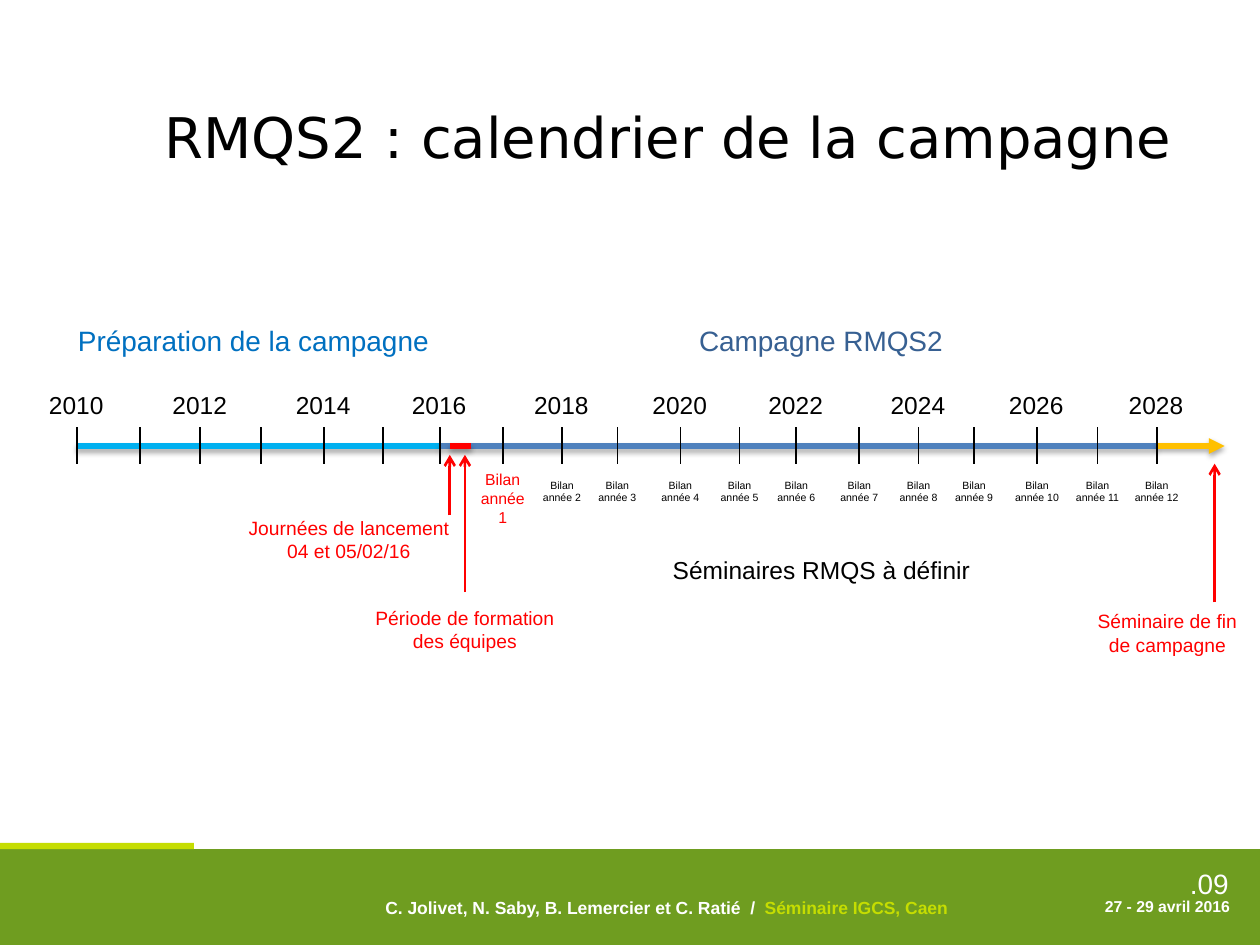
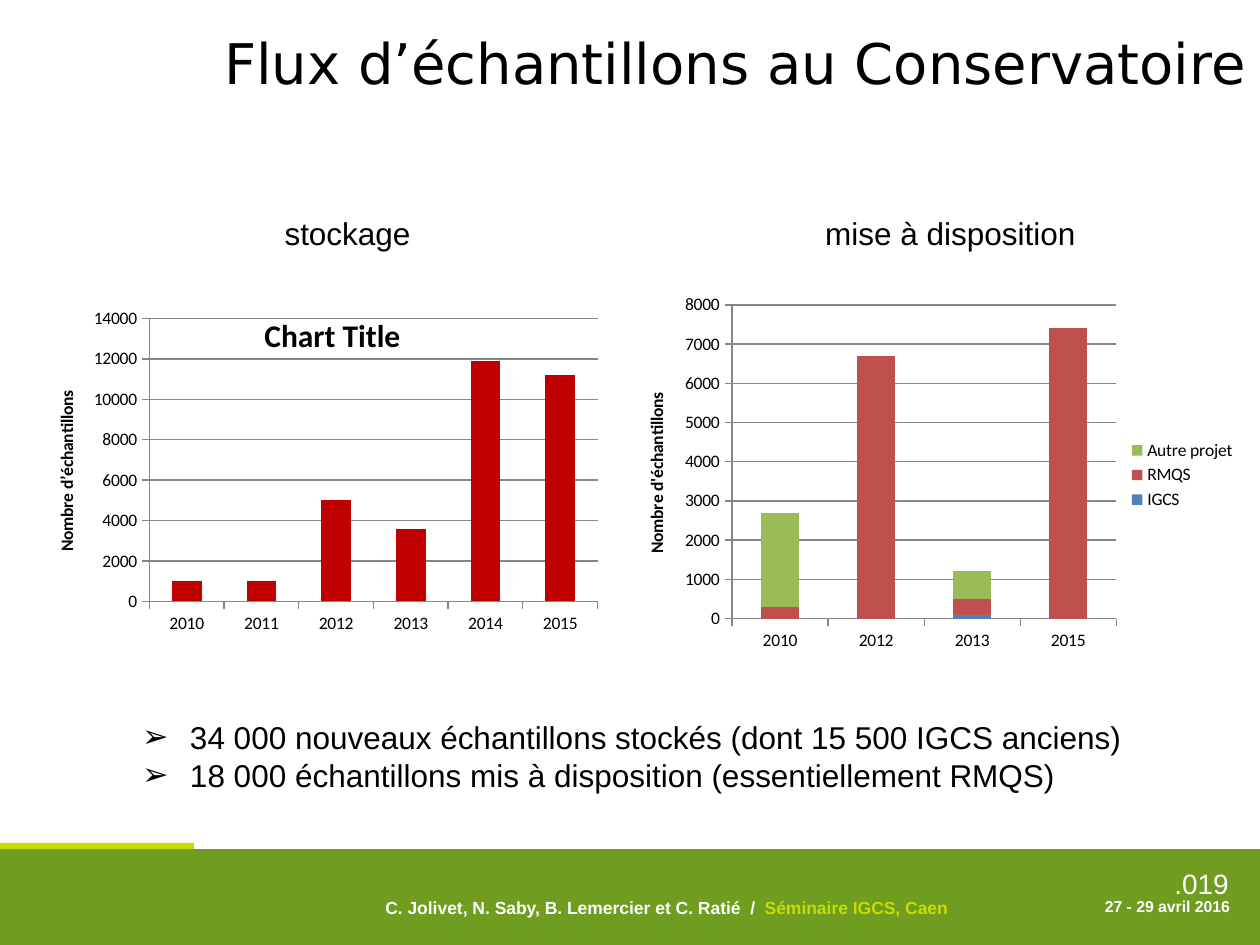
from lxml import etree
from pptx import Presentation
from pptx.chart.data import CategoryChartData
from pptx.dml.color import RGBColor
from pptx.enum.chart import XL_CHART_TYPE as ChartType, XL_LEGEND_POSITION as LegendPosition
from pptx.enum.chart import XL_TICK_MARK as TickMark
from pptx.enum.shapes import MSO_CONNECTOR as Connector, MSO_SHAPE as Shape
from pptx.enum.text import MSO_ANCHOR as Anchor, MSO_AUTO_SIZE as AutoSize, PP_ALIGN as Align
from pptx.oxml import parse_xml
from pptx.oxml.ns import nsdecls, qn
from pptx.util import Inches, Pt

BLACK = RGBColor(0x00, 0x00, 0x00)
WHITE = RGBColor(0xFF, 0xFF, 0xFF)
GREEN = RGBColor(0x6F, 0x9D, 0x20)
LIME = RGBColor(0xC5, 0xDD, 0x01)
RED = RGBColor(0xFF, 0x00, 0x00)
DARK_RED = RGBColor(0xC0, 0x00, 0x00)
BRICK = RGBColor(0xC0, 0x50, 0x4D)
OLIVE = RGBColor(0x9B, 0xBB, 0x59)
SKY = RGBColor(0x00, 0xB0, 0xF0)
BLUE = RGBColor(0x4F, 0x81, 0xBD)
MID_BLUE = RGBColor(0x00, 0x70, 0xC0)
NAVY = RGBColor(0x37, 0x60, 0x92)
AMBER = RGBColor(0xFF, 0xC0, 0x00)
GRID_GRAY = RGBColor(0x86, 0x86, 0x86)

BODY_FONT, TITLE_FONT, CHART_FONT = "Arial", "DejaVu Sans", "Calibri"

AUTHORS = "C. Jolivet, N. Saby, B. Lemercier et C. Ratié  /  "
EVENT = "Séminaire IGCS, Caen"
DATES = "27 - 29 avril 2016"
BANDS = [((0, 6.74, 10, 0.76), GREEN), ((0, 6.69, 1.54, 0.05), LIME)]

# Timeline: one tick per year from 2010 to 2028
FIRST_YEAR, FIRST_REPORT_YEAR = 2010, 2017
AXIS_Y, TICK_TOP, TICK_BOTTOM = 3.54, 3.39, 3.68
TICKS = [0.61, 1.11, 1.59, 2.07, 2.57, 3.04, 3.49, 3.99, 4.46, 4.9,
         5.4, 5.87, 6.32, 6.82, 7.29, 7.73, 8.23, 8.71, 9.18]
PERIODS = [  # start, end, colour, arrowhead
    (0.61, 3.49, SKY, None),
    (3.49, 9.18, BLUE, None),
    (9.18, 9.72, AMBER, "triangle"),
    (3.57, 3.74, RED, None),
]
EVENT_ARROWS = [(3.57, 4.09, 3.61), (3.69, 4.7, 3.61), (9.64, 4.78, 3.68)]  # x, from, to
EVENT_LABELS = [  # place, lines, wrap
    ((1.87, 4.05, 1.8, 0.47), ["Journées de lancement", "04 et 05/02/16"], False),
    ((2.74, 4.76, 1.9, 0.47), ["Période de formation des équipes"], True),
    ((8.52, 4.79, 1.49, 0.47), ["Séminaire de fin de campagne"], True),
]
TIMELINE_HEADINGS = [
    ((0.52, 2.52, 3.02, 0.37), "Préparation de la campagne", 16, MID_BLUE),
    ((5.45, 2.52, 2.16, 0.37), "Campagne RMQS2", 16, NAVY),
    ((5.24, 4.36, 2.58, 0.34), "Séminaires RMQS à définir", 14, BLACK),
]

CHARTS = [
    {
        "at": (0.32, 2.24, 4.56, 2.88), "type": ChartType.COLUMN_CLUSTERED,
        "title": "Chart Title", "axis_title": "Nombre d’échantillons",
        "years": ["2010", "2011", "2012", "2013", "2014", "2015"],
        "series": [("Series 1", [1000, 1000, 5000, 3600, 11900, 11200], DARK_RED)],
        "maximum": 14000, "step": 2000, "overlap": 0, "plot": (0.19, 0.1, 0.78, 0.78),
    },
    {
        "at": (4.91, 2.27, 5, 3), "type": ChartType.COLUMN_STACKED,
        "title": None, "axis_title": "Nombre d'échantillons",
        "years": ["2010", "2012", "2013", "2015"],
        "series": [
            ("IGCS", [None, None, 100, None], BLUE),
            ("RMQS", [300, 6700, 400, 7400], BRICK),
            ("Autre projet", [2400, None, 700, None], OLIVE),
        ],
        "maximum": 8000, "step": 1000, "overlap": 100, "plot": (0.18, 0.05, 0.61, 0.83),
    },
]
CHART_HEADINGS = [
    ((2.16, 1.65, 1.28, 0.4), "stockage"),
    ((6.45, 1.65, 2.21, 0.4), "mise à disposition"),
]
FINDINGS = [
    "34 000 nouveaux échantillons stockés (dont 15 500 IGCS anciens)",
    "18 000 échantillons mis à disposition (essentiellement RMQS)",
]


def inches(values):
    return [Inches(value) for value in values]


def style_font(font, size, color, name=BODY_FONT, bold=False):
    font.size, font.name, font.bold = Pt(size), name, bold
    font.color.rgb = color


def add_bullet(para):
    properties = para._p.get_or_add_pPr()
    properties.set("marL", str(Inches(0.38)))
    properties.set("indent", str(-Inches(0.38)))
    etree.SubElement(properties, qn("a:buFont")).set("typeface", BODY_FONT)
    etree.SubElement(properties, qn("a:buChar")).set("char", "➢")


def add_text(page, at, lines, size, color=BLACK, align=Align.LEFT,
             bold=False, wrap=True, bullets=False):
    """Add a text box; a line is a string or a list of (text, colour) spans."""
    frame = page.shapes.add_textbox(*inches(at)).text_frame
    frame.word_wrap = wrap
    frame.auto_size = AutoSize.SHAPE_TO_FIT_TEXT
    for number, line in enumerate(lines):
        para = frame.add_paragraph() if number else frame.paragraphs[0]
        para.alignment = align
        if bullets:
            add_bullet(para)
        spans = [(line, color)] if isinstance(line, str) else line
        for text, span_color in spans:
            span = para.add_run()
            span.text = text
            style_font(span.font, size, span_color, bold=bold)


def add_line(page, start, end, color, width, head=None, shadow=False):
    line = page.shapes.add_connector(Connector.STRAIGHT, *inches(start + end))
    line.line.color.rgb = color
    line.line.width = Pt(width)
    if head:
        etree.SubElement(line.get_or_add_ln(), qn("a:tailEnd")).set("type", head)
    effects = etree.SubElement(line.element.spPr, qn("a:effectLst"))
    if shadow:
        effects.append(parse_xml(
            f'<a:outerShdw {nsdecls("a")} blurRad="{Pt(3.1)}" dist="{Pt(1.8)}" dir="5400000" '
            'rotWithShape="0"><a:srgbClr val="000000"><a:alpha val="35000"/></a:srgbClr>'
            '</a:outerShdw>'))


def add_page(deck, title, title_at, number):
    """Add a slide with the shared title style, bands and footer."""
    page = deck.slides.add_slide(deck.slide_layouts[5])
    box = page.shapes.title
    box.left, box.top, box.width, box.height = inches(title_at)
    frame = box.text_frame
    frame.auto_size, frame.word_wrap = AutoSize.NONE, True
    frame.vertical_anchor = Anchor.BOTTOM
    para = frame.paragraphs[0]
    para.alignment = Align.RIGHT
    span = para.add_run()
    span.text = title
    style_font(span.font, 32, BLACK, TITLE_FONT)

    for at, color in BANDS:
        band = page.shapes.add_shape(Shape.RECTANGLE, *inches(at))
        band.shadow.inherit = False
        band.fill.solid()
        band.fill.fore_color.rgb = color
        band.line.fill.background()
    add_text(page, (8.62, 6.83, 1.23, 0.27), [f".0{number}"], 16, WHITE, Align.RIGHT)
    add_text(page, (7.78, 7.07, 2.08, 0.25), [DATES], 9, WHITE, Align.RIGHT, bold=True)
    add_text(page, (2.96, 7.07, 5.96, 0.27), [[(AUTHORS, WHITE), (EVENT, LIME)]], 10, bold=True)
    return page


def add_timeline(page):
    for start, end, color, head in PERIODS:
        add_line(page, (start, AXIS_Y), (end, AXIS_Y), color, 3, head, shadow=True)
    for year, x in enumerate(TICKS, FIRST_YEAR):
        add_line(page, (x, TICK_TOP), (x, TICK_BOTTOM), BLACK, 1)
        if year % 2 == 0:
            add_text(page, (x - 0.32, 3.05, 0.64, 0.34), [str(year)], 14, wrap=False)
        report = year - FIRST_REPORT_YEAR + 1
        if report == 1:
            width, top, height, size, color = 0.63, 3.68, 0.56, 9, RED
        else:
            width, top, height, size, color = 0.51 if report < 10 else 0.58, 3.75, 0.3, 6, BLACK
        if report >= 1:
            add_text(page, (x - width / 2, top, width, height), [f"Bilan année {report}"],
                     size, color, Align.CENTER)
    for x, start, end in EVENT_ARROWS:
        add_line(page, (x, start), (x, end), RED, 1.5, "arrow")
    for at, lines, wrap in EVENT_LABELS:
        add_text(page, at, lines, 11, RED, Align.CENTER, wrap=wrap)
    for at, heading, size, color in TIMELINE_HEADINGS:
        add_text(page, at, [heading], size, color, wrap=False)


def set_layout(parent, index, **places):
    """Give a chart part a manual layout, as fractions of the chart."""
    present = parent.find(qn("c:layout"))
    if present is not None:
        parent.remove(present)
    target = '<c:layoutTarget val="inner"/>' if "w" in places else ""
    modes = "".join(f'<c:{key}Mode val="edge"/>' for key in "xy")
    values = "".join(f'<c:{key} val="{value}"/>' for key, value in places.items())
    parent.insert(index, parse_xml(
        f'<c:layout {nsdecls("c")}><c:manualLayout>{target}{modes}{values}'
        '</c:manualLayout></c:layout>'))


def add_title_run(title, text, size):
    span = title.text_frame.paragraphs[0].add_run()
    span.text = text
    style_font(span.font, size, BLACK, CHART_FONT, bold=True)


def add_column_chart(page, content):
    data = CategoryChartData()
    data.categories = content["years"]
    for name, values, _ in content["series"]:
        data.add_series(name, values)
    chart = page.shapes.add_chart(content["type"], *inches(content["at"]), data).chart
    style_font(chart.font, 10, BLACK, CHART_FONT)

    chart.has_title = content["title"] is not None
    if chart.has_title:
        add_title_run(chart.chart_title, content["title"], 18)
        title = chart.element.xpath("c:chart/c:title")[0]
        set_layout(title, 1, x=0.38, y=0.07)
        title.find(qn("c:overlay")).set("val", "1")

    plot = chart.plots[0]
    plot.gap_width, plot.overlap = 150, content["overlap"]
    plot.vary_by_categories = False
    for series, (_, _, color) in zip(plot.series, content["series"]):
        series.format.fill.solid()
        series.format.fill.fore_color.rgb = color
    set_layout(chart.element.xpath("c:chart/c:plotArea")[0], 0, **dict(zip("xywh", content["plot"])))

    values = chart.value_axis
    values.minimum_scale, values.maximum_scale = 0, content["maximum"]
    values.major_unit = content["step"]
    values.has_major_gridlines = True
    add_title_run(values.axis_title, content["axis_title"], 10)
    for axis in (values, chart.category_axis):
        axis.major_tick_mark = TickMark.OUTSIDE
        axis.format.line.color.rgb = GRID_GRAY
    values.major_gridlines.format.line.color.rgb = GRID_GRAY

    chart.has_legend = len(content["series"]) > 1
    if chart.has_legend:
        chart.legend.position = LegendPosition.RIGHT
        chart.legend.include_in_layout = False


def main():
    deck = Presentation()
    deck.slide_width, deck.slide_height = Inches(10), Inches(7.5)

    calendar = add_page(deck, "RMQS2 : calendrier de la campagne", (0.39, 0.45, 9.02, 0.95), 9)
    add_timeline(calendar)

    flows = add_page(deck, "Flux d’échantillons au Conservatoire", (0.59, 0.25, 9.41, 0.56), 19)
    for content in CHARTS:
        add_column_chart(flows, content)
    for at, heading in CHART_HEADINGS:
        add_text(flows, at, [heading], 18, wrap=False)
    add_text(flows, (1.03, 5.65, 8.53, 0.71), FINDINGS, 18, bullets=True)

    deck.save("out.pptx")


if __name__ == "__main__":
    main()
